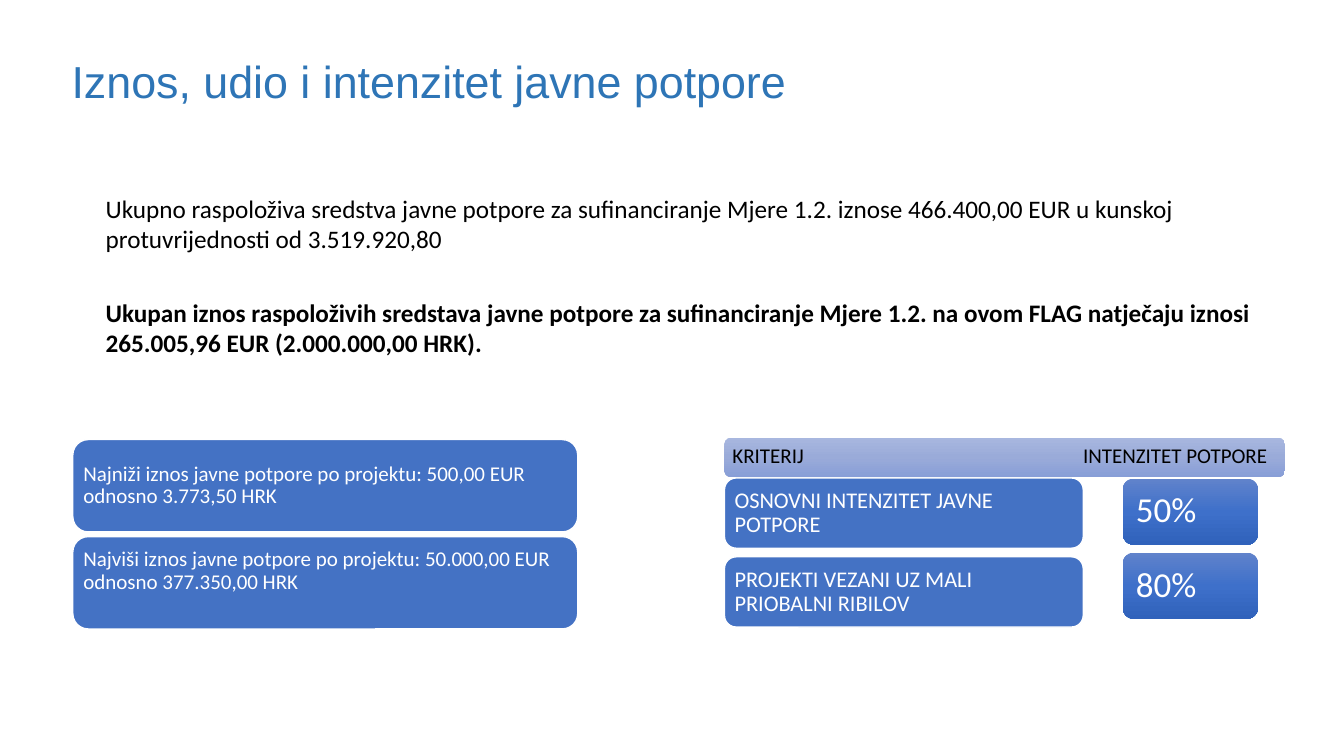
from pptx import Presentation
from pptx import util as u
from pptx.dml.color import RGBColor
from pptx.enum import shapes, text
from pptx.oxml import parse_xml
from pptx.oxml.ns import nsdecls

TITLE = "Iznos, udio i intenzitet javne potpore"
# top, width, lines; a line is a list of (words, bold, italic)
STATEMENTS = [
    (134.6, 785.5, [
        [("Ukupno raspoloživa sredstva javne potpore za sufinanciranje Mjere 1.2. "
          "iznose 466.400,00 EUR u kunskoj", False, False)],
        [("protuvrijednosti od 3.519.920,80", False, False)]]),
    (208.8, 838.8, [
        [("Ukupan iznos raspoloživih sredstava javne potpore za sufinanciranje Mjere 1.2. "
          "na ovom FLAG natječaju iznosi", True, False)],
        [("265.005,96 EUR (2.000.000,00 HRK)", True, False), (".", True, True)]]),
]
# words, extra space below them
AMOUNTS = [
    ("Najniži iznos javne potpore po projektu: 500,00 EUR odnosno 3.773,50 HRK", 0),
    ("Najviši iznos javne potpore po projektu: 50.000,00 EUR odnosno 377.350,00 HRK", 17),
]
HEADER = "KRITERIJ\tINTENZITET POTPORE"
CRITERIA = [
    ("OSNOVNI INTENZITET JAVNE POTPORE", "50%"),
    ("PROJEKTI VEZANI UZ MALI PRIOBALNI RIBILOV", "80%"),
]
BLUE, WHITE, BLACK, TITLE_BLUE = "4472C4", "FFFFFF", "000000", "2E75B6"
HEADER_FADE = ("A8B7DF", "9AABD9", "889ED7")
RATE_FADE = ("6183CB", "3E70CA", "3062BB")
INTENSITY_TAB = 250.5


def rgb(value):
    return RGBColor.from_string(value)


def add_run(para, words, size, color, font="Calibri", bold=False, italic=False):
    span = para.add_run()
    span.text = words
    span.font.size, span.font.name = u.Pt(size), font
    span.font.bold, span.font.italic = bold, italic
    span.font.color.rgb = rgb(color)


def fade(shape, colors):
    """Fill a shape from top to bottom with three colours."""
    shape.fill.background()
    stops = "".join(f'<a:gs pos="{i * 50000}"><a:srgbClr val="{color}"/></a:gs>'
                    for i, color in enumerate(colors))
    gradient = parse_xml(f'<a:gradFill {nsdecls("a")} rotWithShape="1"><a:gsLst>{stops}</a:gsLst>'
                         '<a:lin ang="5400000" scaled="0"/></a:gradFill>')
    properties = shape.fill._xPr
    properties.replace(properties.find("{*}noFill"), gradient)


def add_card(page, place, words, size, inset, color=WHITE, colors=None, below=0):
    card = page.shapes.add_shape(shapes.MSO_SHAPE.ROUNDED_RECTANGLE, *map(u.Pt, place))
    card.shadow.inherit = False
    if colors:
        fade(card, colors)
        card.line.fill.background()
    else:
        card.fill.solid()
        card.fill.fore_color.rgb = rgb(BLUE)
        card.line.color.rgb = rgb(WHITE)
        card.line.width = u.Pt(1)
    frame = card.text_frame
    frame.word_wrap = True
    frame.vertical_anchor = text.MSO_ANCHOR.MIDDLE
    frame.margin_left = frame.margin_right = frame.margin_top = u.Pt(inset)
    frame.margin_bottom = u.Pt(inset + below)
    para = frame.paragraphs[0]
    para.alignment = text.PP_ALIGN.LEFT
    para.line_spacing = 0.9
    add_run(para, words, size, color)
    return card


def add_title(page):
    title = page.shapes.title
    title.left, title.top, title.width, title.height = map(u.Pt, (43.9, 34.6, 534.2, 46))
    frame = title.text_frame
    frame.word_wrap = False
    frame.vertical_anchor = text.MSO_ANCHOR.MIDDLE
    para = frame.paragraphs[0]
    para.alignment = text.PP_ALIGN.LEFT
    add_run(para, TITLE, 32, TITLE_BLUE, "Arial")


def add_statement(page, top, width, lines):
    box = page.shapes.add_textbox(*map(u.Pt, (68.4, top, width, 72.7)))
    box.text_frame.word_wrap = False
    para = box.text_frame.paragraphs[0]
    for i, line in enumerate(lines):
        if i:
            para.add_line_break()
        for words, bold, italic in line:
            add_run(para, words, 18, BLACK, bold=bold, italic=italic)


def main():
    deck = Presentation()
    deck.slide_width, deck.slide_height = u.Pt(960), u.Pt(540)
    page = deck.slides.add_slide(deck.slide_layouts[5])
    add_title(page)
    for statement in STATEMENTS:
        add_statement(page, *statement)
    for i, (words, below) in enumerate(AMOUNTS):
        add_card(page, (52, 314 + 69.3 * i, 360.7, 66), words, 15, 4.3, below=below)

    header = add_card(page, (517.5, 312.6, 400.3, 28), HEADER, 15, 4.3, BLACK, HEADER_FADE)
    properties = header.text_frame.paragraphs[0]._p.get_or_add_pPr()
    properties.append(parse_xml(f'<a:tabLst {nsdecls("a")}>'
                                f'<a:tab pos="{u.Pt(INTENSITY_TAB)}" algn="l"/></a:tabLst>'))
    for i, (criterion, rate) in enumerate(CRITERIA):
        add_card(page, (517.5, 341.4 + 56.3 * i, 256.3, 50.2), criterion, 16, 4.8)
        add_card(page, (802, 341.8 + 52.9 * i, 96.6, 47.3), rate, 25, 7.2, colors=RATE_FADE)
    deck.save("out.pptx")


if __name__ == "__main__":
    main()
